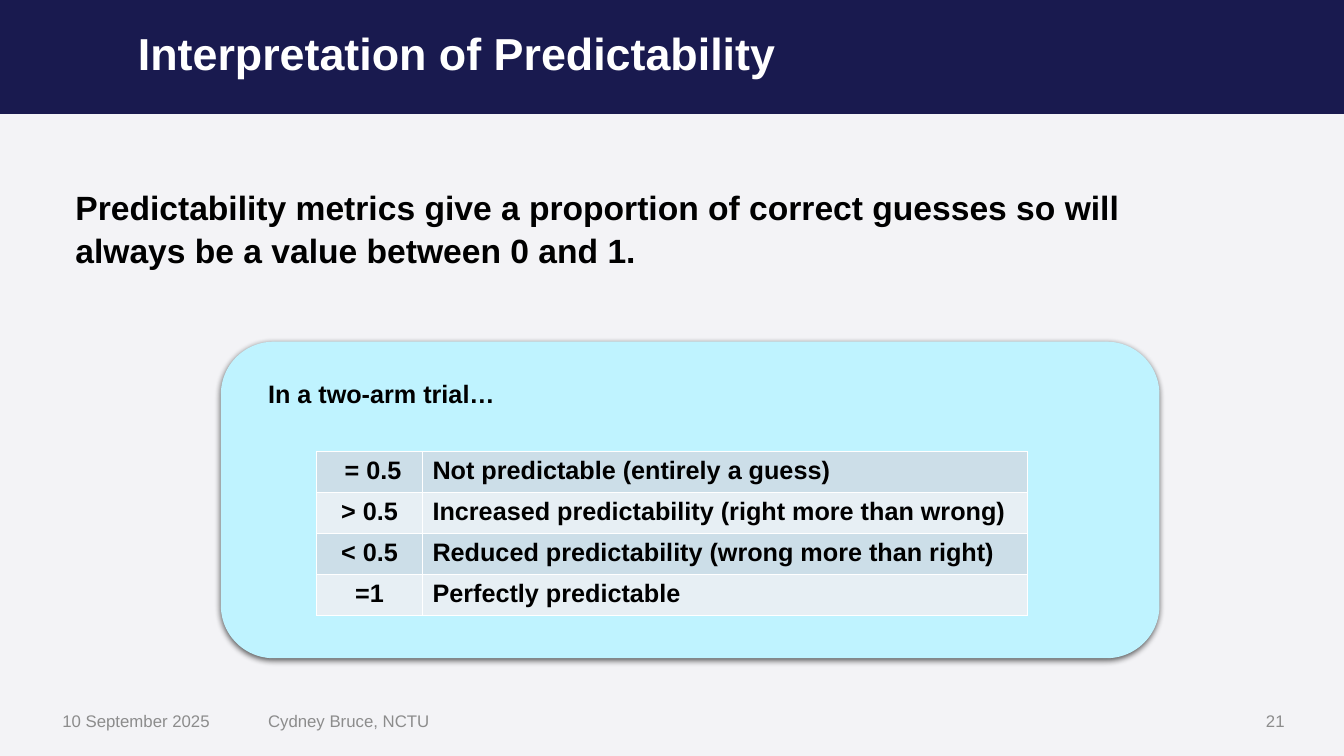
from pptx import Presentation
from pptx.dml.color import RGBColor
from pptx.enum.shapes import MSO_SHAPE
from pptx.enum.text import MSO_ANCHOR, PP_ALIGN
from pptx.oxml import parse_xml
from pptx.oxml.ns import nsdecls
from pptx.util import Inches, Pt

NAVY = RGBColor(0x19, 0x1A, 0x4F)
PALE = RGBColor(0xF3, 0xF3, 0xF6)
CYAN = RGBColor(0xBF, 0xF3, 0xFF)
BAND_DARK = RGBColor(0xCC, 0xDE, 0xE8)
BAND_LIGHT = RGBColor(0xE7, 0xEF, 0xF4)
GREY = RGBColor(0x8C, 0x8C, 0x8C)
BLACK = RGBColor(0, 0, 0)
WHITE = RGBColor(0xFF, 0xFF, 0xFF)

RECT, ROUNDED = MSO_SHAPE.RECTANGLE, MSO_SHAPE.ROUNDED_RECTANGLE
TOP, MIDDLE = MSO_ANCHOR.TOP, MSO_ANCHOR.MIDDLE
LEFT, CENTER, RIGHT = PP_ALIGN.LEFT, PP_ALIGN.CENTER, PP_ALIGN.RIGHT


def write(tf, text, size=18, color=BLACK, bold=True, align=LEFT, spacing=None):
    p = tf.paragraphs[0]
    p.alignment = align
    if spacing:
        p.line_spacing = spacing
    r = p.add_run()
    r.text = text
    r.font.name = "Arial"
    r.font.size = Pt(size)
    r.font.bold = bold
    r.font.color.rgb = color


class SlideBuilder:
    def __init__(self, prs):
        self.s = prs.slides.add_slide(prs.slide_layouts[6])
        fill = self.s.background.fill
        fill.solid()
        fill.fore_color.rgb = PALE

    def shape(self, kind, x, y, w, h, color):
        sp = self.s.shapes.add_shape(kind, Inches(x), Inches(y), Inches(w), Inches(h))
        sp.shadow.inherit = False
        sp.fill.solid()
        sp.fill.fore_color.rgb = color
        sp.line.fill.background()
        return sp

    def shadow(self, sp, blur, distance, alpha):
        effects = sp._element.spPr.find("{*}effectLst")
        effects.append(parse_xml(
            f'<a:outerShdw {nsdecls("a")} blurRad="{Pt(blur)}" dist="{Pt(distance)}" '
            f'dir="5400000" rotWithShape="0"><a:srgbClr val="000000">'
            f'<a:alpha val="{alpha * 1000}"/></a:srgbClr></a:outerShdw>'))

    def text(self, x, y, w, h, text, anchor=TOP, **style):
        tb = self.s.shapes.add_textbox(Inches(x), Inches(y), Inches(w), Inches(h))
        tf = tb.text_frame
        tf.word_wrap = True
        tf.vertical_anchor = anchor
        write(tf, text, **style)

    def table(self, x, y, widths, row_height, rows):
        frame = self.s.shapes.add_table(
            len(rows), len(widths), Inches(x), Inches(y),
            Inches(sum(widths)), Inches(row_height * len(rows)))
        table = frame.table
        table.first_row = False
        for column, width in zip(table.columns, widths):
            column.width = Inches(width)
        for i, row in enumerate(rows):
            table.rows[i].height = Inches(row_height)
            for j, text in enumerate(row):
                cell = table.cell(i, j)
                self.borders(cell)
                cell.fill.solid()
                cell.fill.fore_color.rgb = BAND_LIGHT if i % 2 else BAND_DARK
                write(cell.text_frame, text, align=LEFT if j else CENTER)

    def borders(self, cell):
        tcPr = cell._tc.get_or_add_tcPr()
        for side in ("lnL", "lnR", "lnT", "lnB"):
            tcPr.append(parse_xml(
                f'<a:{side} {nsdecls("a")} w="{Pt(1)}"><a:solidFill>'
                f'<a:srgbClr val="{WHITE}"/></a:solidFill></a:{side}>'))


def main():
    prs = Presentation()
    prs.slide_width, prs.slide_height = Inches(13.33), Inches(7.5)
    slide = SlideBuilder(prs)

    # Title band
    slide.shape(RECT, 0, 0, 13.33, 1.13, NAVY)
    slide.text(1.27, -0.01, 11.57, 1.13, "Interpretation of Predictability",
               anchor=MIDDLE, size=32, color=WHITE, spacing=0.9)

    # Main statement
    slide.text(0.65, 1.78, 11.57, 1.0,
               "Predictability metrics give a proportion of correct guesses "
               "so will always be a value between 0 and 1.",
               size=24, spacing=1.07)

    # Panel with the value table
    panel = slide.shape(ROUNDED, 2.19, 3.39, 9.31, 3.14, CYAN)
    slide.shadow(panel, blur=4.5, distance=1.5, alpha=63)
    slide.table(3.14, 4.48, (1.05, 6), 0.406, [
        (" = 0.5", "Not predictable (entirely a guess)"),
        ("> 0.5", "Increased predictability (right more than wrong)"),
        ("< 0.5", "Reduced predictability (wrong more than right)"),
        ("=1", "Perfectly predictable"),
    ])
    slide.text(2.56, 3.68, 8.19, 0.45, "In a two-arm trial…", spacing=1.07)

    # Footer
    for x, width, text, align in (
            (0.52, 1.76, "10 September 2025", LEFT),
            (2.56, 3.79, "Cydney Bruce, NCTU", LEFT),
            (9.66, 3.18, "21", RIGHT)):
        slide.text(x, 6.95, width, 0.4, text, anchor=MIDDLE, size=12,
                   color=GREY, bold=False, align=align)

    prs.save("out.pptx")


if __name__ == "__main__":
    main()
